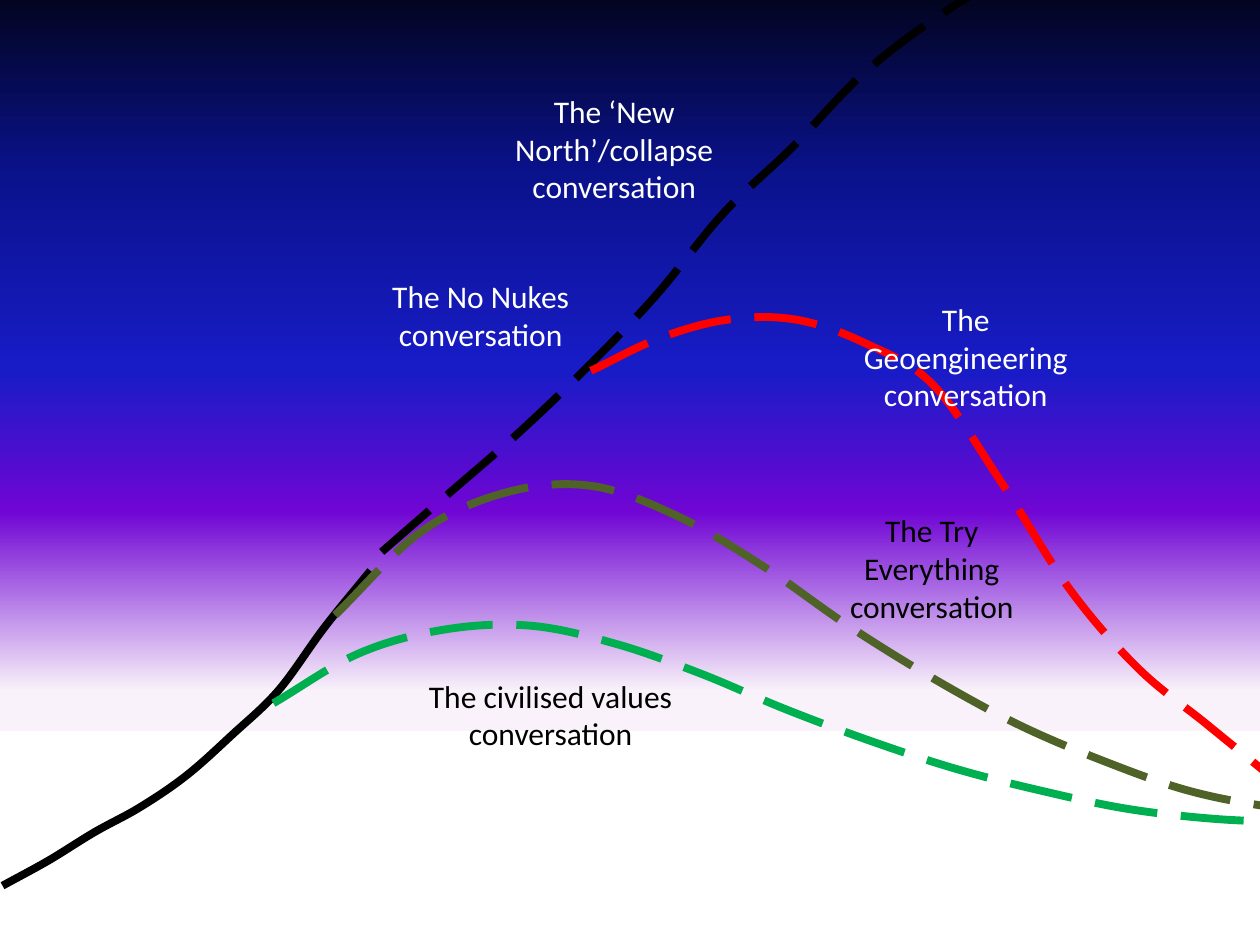
from lxml.etree import SubElement
from pptx import Presentation
from pptx.dml.color import RGBColor
from pptx.enum.dml import MSO_LINE_DASH_STYLE as DASH
from pptx.enum.shapes import MSO_SHAPE
from pptx.enum.text import MSO_AUTO_SIZE, PP_ALIGN
from pptx.oxml.ns import qn
from pptx.util import Inches, Pt

BLACK, WHITE, RED, GREEN, OLIVE = "000000", "FFFFFF", "FF0000", "00B050", "4F6228"

# Boxes are (left, top, width, height) in inches.
SKY_BOX = (0, -0.42, 10.39, 6.22)
SKY_STOPS = {0: BLACK, 29: "0A128C", 54: "181CC7", 72: "7005D4", 95: "F9F2FA"}

# A profile lists depths at equal steps across a box: 0 is its top, 1 its bottom.
RISE_SO_FAR = [1, 0.92, 0.83, 0.75, 0.65, 0.52, 0.38, 0.18, 0]
RISE_ONWARD = [1, 0.9, 0.8, 0.69, 0.57, 0.43, 0.32, 0.2, 0.11, 0.04, 0]
EARLY_PEAK = [0.4, 0.15, 0.03, 0.01, 0.1, 0.25, 0.43, 0.59, 0.73, 0.84, 0.93, 0.98, 1]
LATE_PEAK = [0.12, 0.05, 0.01, 0.01, 0.06, 0.15, 0.36, 0.59, 0.76, 0.88, 1]

# The two early peaks share one profile, stretched to different heights.
CURVES = [
    (RISE_SO_FAR, (0.02, 4.53, 2.92, 2.5), BLACK, DASH.SOLID),
    (EARLY_PEAK, (2.17, 4.95, 8.13, 1.58), GREEN, DASH.LONG_DASH),
    (EARLY_PEAK, (2.66, 3.83, 8.13, 2.63), OLIVE, DASH.LONG_DASH),
    (RISE_ONWARD, (3.03, -0.34, 5.43, 4.72), BLACK, DASH.LONG_DASH),
    (LATE_PEAK, (4.69, 2.5, 5.43, 3.69), RED, DASH.LONG_DASH),
]
LABELS = [
    ("The civilised values conversation", (3.27, 5.32, 2.2, 0.71), BLACK),
    ("The No Nukes conversation", (2.91, 2.15, 1.81, 0.71), WHITE),
    ("The Try Everything conversation", (6.49, 4.01, 1.81, 1.01), BLACK),
    ("The Geoengineering\nconversation", (6.58, 2.33, 2.17, 1.01), WHITE),
    ("The ‘New North’/collapse conversation", (3.97, 0.68, 1.81, 1.01), WHITE),
]


def rgb(color):
    return RGBColor.from_string(color)


def add_sky(slide, box, stops):
    """Add a rectangle shaded from top to bottom through the given stops."""
    sky = slide.shapes.add_shape(MSO_SHAPE.RECTANGLE, *map(Inches, box))
    sky.shadow.inherit = False
    sky.line.fill.background()
    sky.fill.gradient()
    sky.fill.gradient_angle = 270
    stop_list = next(sky._element.iter(qn("a:gsLst")))
    for stop in list(stop_list):
        stop_list.remove(stop)
    for percent, color in stops.items():
        stop = SubElement(stop_list, qn("a:gs"), pos=str(percent * 1000))
        SubElement(stop, qn("a:srgbClr"), val=color)


def bezier_points(profile, box):
    """Return the start, then two handles and an end for each smooth piece."""
    left, top, width, height = box
    last = len(profile) - 1
    step = width / last
    anchors = [(left + i * step, top + depth * height) for i, depth in enumerate(profile)]
    # The slope at an anchor is that of the line between its two neighbours.
    slopes = []
    for i in range(last + 1):
        (x1, y1), (x2, y2) = anchors[max(i - 1, 0)], anchors[min(i + 1, last)]
        slopes.append((y2 - y1) / (x2 - x1))
    reach = step / 3
    points = [anchors[0]]
    for i in range(last):
        (x1, y1), (x2, y2) = anchors[i], anchors[i + 1]
        points += [
            (x1 + reach, y1 + reach * slopes[i]),
            (x2 - reach, y2 - reach * slopes[i + 1]),
            (x2, y2),
        ]
    return points


def bend_segments(curve):
    """Turn every three straight segments of a freeform into one Bézier piece."""
    outline = next(curve._element.iter(qn("a:path")))
    segments = outline.findall(qn("a:lnTo"))
    for first in range(0, len(segments), 3):
        bezier = SubElement(outline, qn("a:cubicBezTo"))
        for segment in segments[first:first + 3]:
            bezier.append(segment[0])
            outline.remove(segment)


def add_curve(slide, profile, box, color, dash, width=4.5):
    start, *others = [(Inches(x), Inches(y)) for x, y in bezier_points(profile, box)]
    builder = slide.shapes.build_freeform(*start)
    builder.add_line_segments(others, close=False)
    curve = builder.convert_to_shape()
    bend_segments(curve)
    curve.shadow.inherit = False
    curve.fill.background()
    curve.line.color.rgb = rgb(color)
    curve.line.width = Pt(width)
    curve.line.dash_style = dash


def add_text(slide, text, box, color=BLACK, size=18, font="Calibri", align=PP_ALIGN.CENTER):
    frame = slide.shapes.add_textbox(*map(Inches, box)).text_frame
    frame.word_wrap = True
    frame.auto_size = MSO_AUTO_SIZE.SHAPE_TO_FIT_TEXT
    frame.text = text
    for paragraph in frame.paragraphs:
        paragraph.alignment = align
        for run in paragraph.runs:
            run.font.name = font
            run.font.size = Pt(size)
            run.font.color.rgb = rgb(color)


def main():
    presentation = Presentation()
    presentation.slide_width, presentation.slide_height = Inches(10), Inches(7.5)
    slide = presentation.slides.add_slide(presentation.slide_layouts[6])
    add_sky(slide, SKY_BOX, SKY_STOPS)
    for profile, box, color, dash in CURVES:
        add_curve(slide, profile, box, color, dash)
    for text, box, color in LABELS:
        add_text(slide, text, box, color=color)
    presentation.save("out.pptx")


if __name__ == "__main__":
    main()
